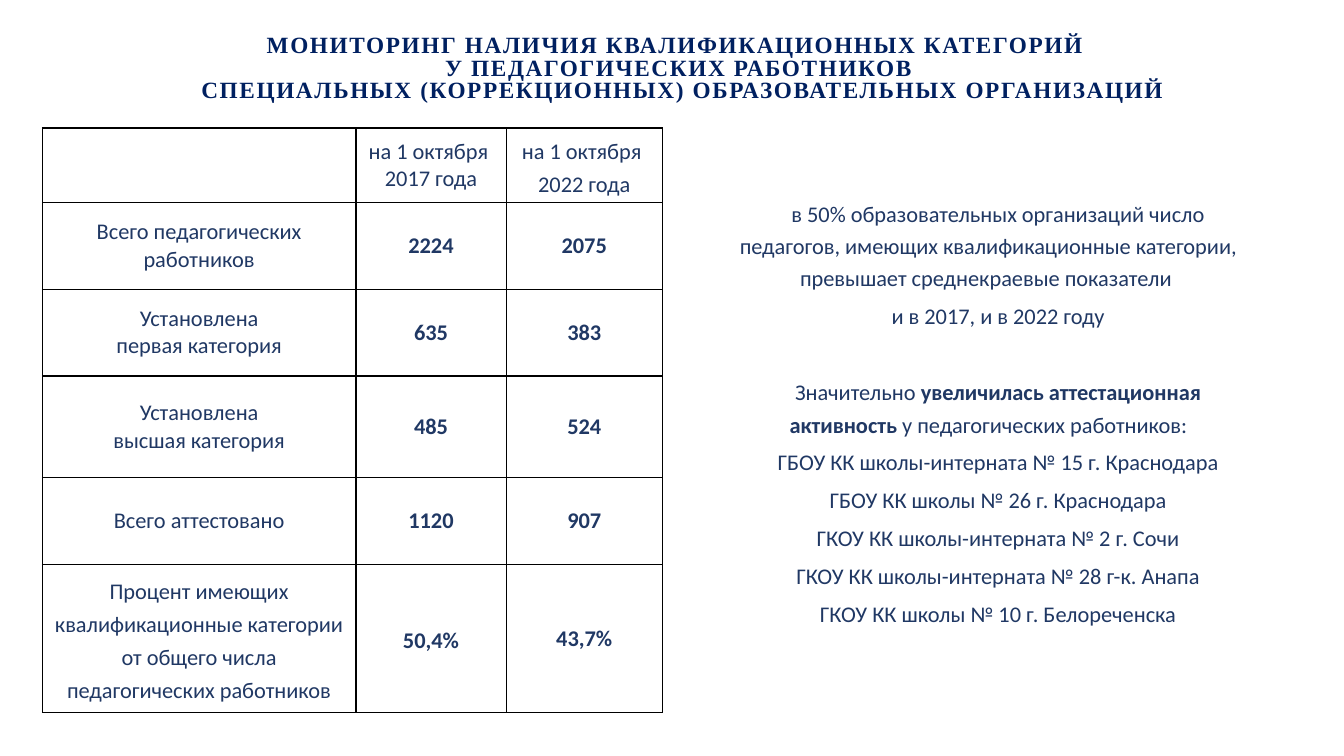
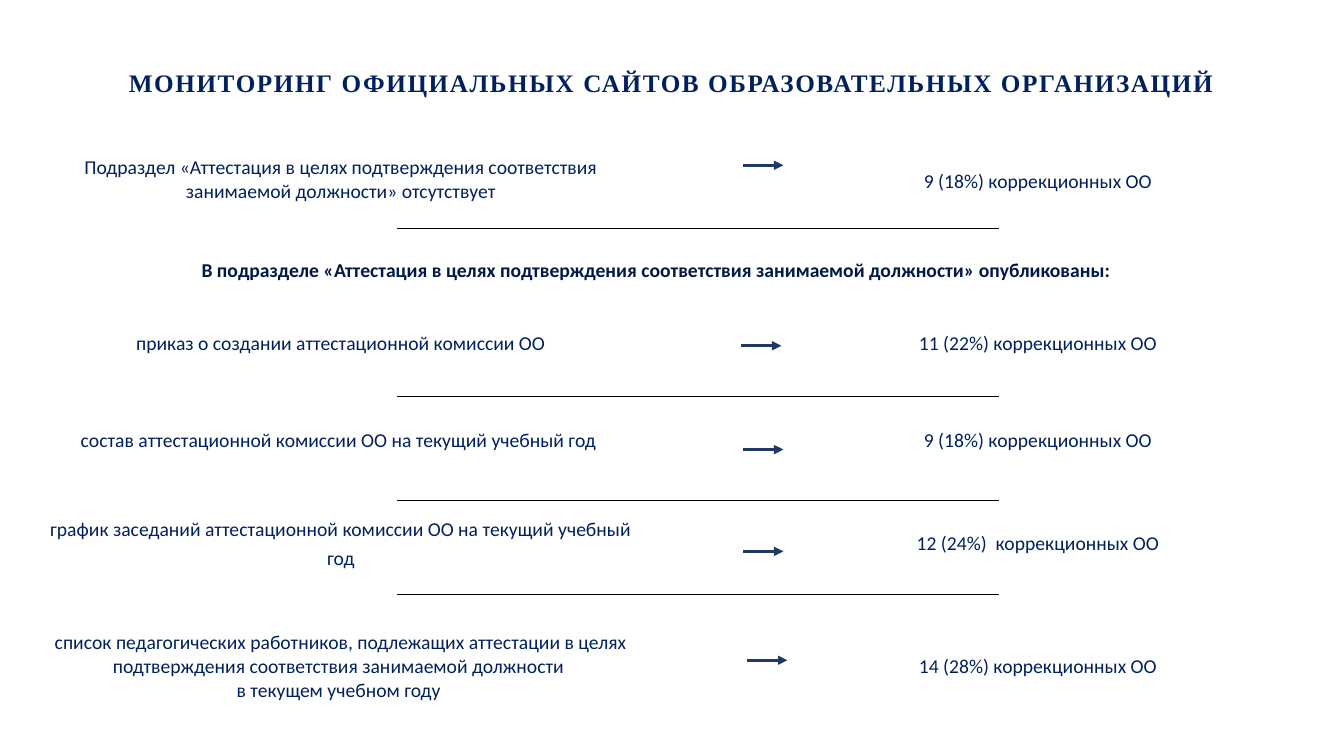
"""Build two slides on staff certification monitoring."""
from lxml.etree import SubElement
from pptx import Presentation
from pptx.dml.color import RGBColor
from pptx.enum.shapes import MSO_CONNECTOR, MSO_SHAPE
from pptx.enum.text import MSO_ANCHOR, PP_ALIGN
from pptx.oxml.ns import qn
from pptx.util import Inches, Pt

NAVY, BLUE, DARK, BLACK = "002060", "203864", "001848", "000000"
NO_STYLE = "{2D5ABB26-0587-4C30-8999-92F81FD0307C}"

CATEGORY_TITLE = [
    "МОНИТОРИНГ НАЛИЧИЯ КВАЛИФИКАЦИОННЫХ КАТЕГОРИЙ  ",
    "У ПЕДАГОГИЧЕСКИХ РАБОТНИКОВ ",
    "СПЕЦИАЛЬНЫХ (КОРРЕКЦИОННЫХ) ОБРАЗОВАТЕЛЬНЫХ ОРГАНИЗАЦИЙ",
]
CATEGORY_ROWS = [
    ("", "на 1 октября \n2017 года", "на 1 октября \n2022 года"),
    ("Всего педагогических работников", "2224", "2075"),
    ("Установлена\nпервая категория", "635", "383"),
    ("Установлена\nвысшая категория", "485", "524"),
    ("Всего аттестовано", "1120", "907"),
    ("Процент имеющих квалификационные категории \n"
     "от общего числа педагогических работников", "50,4%", "43,7%"),
]
CATEGORY_COLS = [3.11, 1.49, 1.55]
CATEGORY_HEIGHTS = [0.7, 0.86, 0.86, 1.01, 0.86, 1.47]
CATEGORY_LOOSE = {(0, 2), (5, 0), (5, 1)}

FINDINGS = [
    "в 50% образовательных организаций число педагогов, имеющих "
    "квалификационные категории, превышает среднекраевые показатели ",
    "и в 2017, и в 2022 году",
]
ACTIVITY = [
    [("Значительно ", False), ("увеличилась аттестационная активность ", True),
     ("у педагогических работников:", False)],
    "ГБОУ КК школы-интерната № 15 г. Краснодара",
    "ГБОУ КК школы № 26 г. Краснодара",
    "ГКОУ КК школы-интерната № 2 г. Сочи",
    "ГКОУ КК школы-интерната № 28 г-к. Анапа",
    "ГКОУ КК школы № 10 г. Белореченска",
]

SITE_TITLE = ["МОНИТОРИНГ ОФИЦИАЛЬНЫХ САЙТОВ ОБРАЗОВАТЕЛЬНЫХ ОРГАНИЗАЦИЙ"]
SITE_ROWS = [
    ("Подраздел «Аттестация в целях подтверждения соответствия "
     "занимаемой должности» отсутствует", "", "9 (18%) коррекционных ОО"),
    ("В подразделе «Аттестация в целях подтверждения соответствия "
     "занимаемой должности» опубликованы:", "", ""),
    ("приказ о создании аттестационной комиссии ОО", "",
     "11 (22%) коррекционных ОО"),
    ("состав аттестационной комиссии ОО на текущий учебный год ", "",
     "9 (18%) коррекционных ОО"),
    ("график заседаний аттестационной комиссии ОО на текущий учебный год", "",
     "12 (24%)  коррекционных ОО"),
    ("список педагогических работников, подлежащих аттестации в целях "
     "подтверждения соответствия занимаемой должности \n"
     "в текущем учебном году ", "", "14 (28%) коррекционных ОО"),
]
SITE_COLS = [6.08, 1.49, 4.77]
SITE_HEIGHTS = [1.32, 0.49, 0.96, 0.96, 1.05, 1.43]
SITE_LOOSE = {(0, 2), (4, 0), (4, 2)}
SITE_HEADING = 1
ARROWS = [(7.37, 1.64), (7.35, 3.43), (7.37, 4.46), (7.37, 5.47), (7.41, 6.55)]
ARROW_LENGTH = 0.4
RULES = [2.27, 3.93, 4.96, 5.9]
RULE_LEFT, RULE_RIGHT = 3.94, 9.91


def rgb(value):
    return RGBColor.from_string(value)


def write(tf, paras, size=16, color=BLUE, font="Calibri", bold=False,
          spacing=None, track=None, gap=None, indent=None):
    tf.word_wrap = True
    for i, para in enumerate(paras):
        p = tf.paragraphs[0] if i == 0 else tf.add_paragraph()
        p.alignment = PP_ALIGN.CENTER
        p.line_spacing = spacing
        if gap is not None:
            p.space_before = p.space_after = Pt(gap)
        if indent is not None:
            p._p.get_or_add_pPr().set("indent", str(Inches(indent)))
        for text, strong in [(para, bold)] if isinstance(para, str) else para:
            r = p.add_run()
            r.text = text
            r.font.name, r.font.size, r.font.bold = font, Pt(size), strong
            r.font.color.rgb = rgb(color)
            if track:
                r._r.get_or_add_rPr().set("spc", str(track))


def set_frame(tf, left, top, right, bottom):
    tf.vertical_anchor = MSO_ANCHOR.MIDDLE
    tf.margin_left, tf.margin_top = Inches(left), Inches(top)
    tf.margin_right, tf.margin_bottom = Inches(right), Inches(bottom)


def add_title(s, x, y, w, h, lines, size, track, spacing=None):
    tf = s.shapes.add_textbox(*map(Inches, (x, y, w, h))).text_frame
    set_frame(tf, 0.13, 0.07, 0.13, 0.07)
    write(tf, lines, size=size, color=NAVY, bold=True,
          font="Times New Roman", spacing=spacing, track=track)


def add_panel(s, x, y, w, h, paras, **fmt):
    panel = s.shapes.add_shape(MSO_SHAPE.ROUNDED_RECTANGLE,
                               *map(Inches, (x, y, w, h)))
    panel.shadow.inherit = False
    panel.fill.background()
    panel.line.fill.background()
    set_frame(panel.text_frame, 0, 0.05, 0.25, 0.4)
    write(panel.text_frame, paras, **fmt)
    return panel.text_frame


def add_borders(cell):
    tcPr = cell._tc.get_or_add_tcPr()
    for i, side in enumerate(("lnL", "lnR", "lnT", "lnB")):
        ln = tcPr.makeelement(qn(f"a:{side}"), {"w": str(Pt(1))})
        fill = SubElement(ln, qn("a:solidFill"))
        SubElement(fill, qn("a:srgbClr"), val=BLACK)
        tcPr.insert(i, ln)


def add_grid(s, x, y, rows, cols, heights, style, borders=False):
    """Place a plain table; style(row, col) gives the format of a cell."""
    size = map(Inches, (x, y, sum(cols), sum(heights)))
    table = s.shapes.add_table(len(rows), len(cols), *size).table
    table.first_row = table.horz_banding = False
    table._tbl.tblPr.find(qn("a:tableStyleId")).text = NO_STYLE
    for column, width in zip(table.columns, cols):
        column.width = Inches(width)
    for i, (row, height) in enumerate(zip(rows, heights)):
        table.rows[i].height = Inches(height)
        for j, text in enumerate(row):
            cell = table.cell(i, j)
            cell.fill.background()
            cell.vertical_anchor = MSO_ANCHOR.MIDDLE
            if text:
                write(cell.text_frame, text.split("\n"), **style(i, j))
            if borders:
                add_borders(cell)
    return table


def add_line(s, x1, x2, y, color, width, arrow=False):
    line = s.shapes.add_connector(MSO_CONNECTOR.STRAIGHT,
                                  *map(Inches, (x1, y, x2, y)))
    line.line.color.rgb = rgb(color)
    line.line.width = Pt(width)
    SubElement(line._element.spPr, qn("a:effectLst"))
    if arrow:
        SubElement(line.line._get_or_add_ln(), qn("a:tailEnd"), type="triangle")


def category_style(i, j):
    return {"bold": i > 0 and j > 0,
            "spacing": 1.2 if (i, j) in CATEGORY_LOOSE else None}


def site_style(i, j):
    heading = i == SITE_HEADING
    return {"size": 14, "bold": heading, "color": DARK if heading else NAVY,
            "spacing": 1.2 if (i, j) in SITE_LOOSE else None}


def build_categories(s):
    add_title(s, 0.89, 0.25, 11.75, 0.88, CATEGORY_TITLE, 16.6, 120, 0.8)
    add_grid(s, 0.42, 1.27, CATEGORY_ROWS, CATEGORY_COLS, CATEGORY_HEIGHTS,
             category_style, borders=True)
    tf = add_panel(s, 6.95, 1.41, 5.96, 5.68, FINDINGS + ACTIVITY,
                   spacing=1.2, gap=2, indent=0.19)
    tf.paragraphs[len(FINDINGS)].space_before = Pt(29.4)


def build_sites(s):
    add_title(s, 1.06, 0.42, 11.2, 0.79, SITE_TITLE, 18, 112)
    table = add_grid(s, 0.34, 1.12, SITE_ROWS, SITE_COLS, SITE_HEIGHTS,
                     site_style)
    table.cell(SITE_HEADING, 0).merge(table.cell(SITE_HEADING, 2))
    for x, y in ARROWS:
        add_line(s, x, x + ARROW_LENGTH, y, BLUE, 2.25, arrow=True)
    for y in RULES:
        add_line(s, RULE_LEFT, RULE_RIGHT, y, BLACK, 0.5)


def main():
    prs = Presentation()
    prs.slide_width, prs.slide_height = Inches(13.33), Inches(7.5)
    for build in (build_categories, build_sites):
        build(prs.slides.add_slide(prs.slide_layouts[6]))
    prs.save("out.pptx")


if __name__ == "__main__":
    main()
